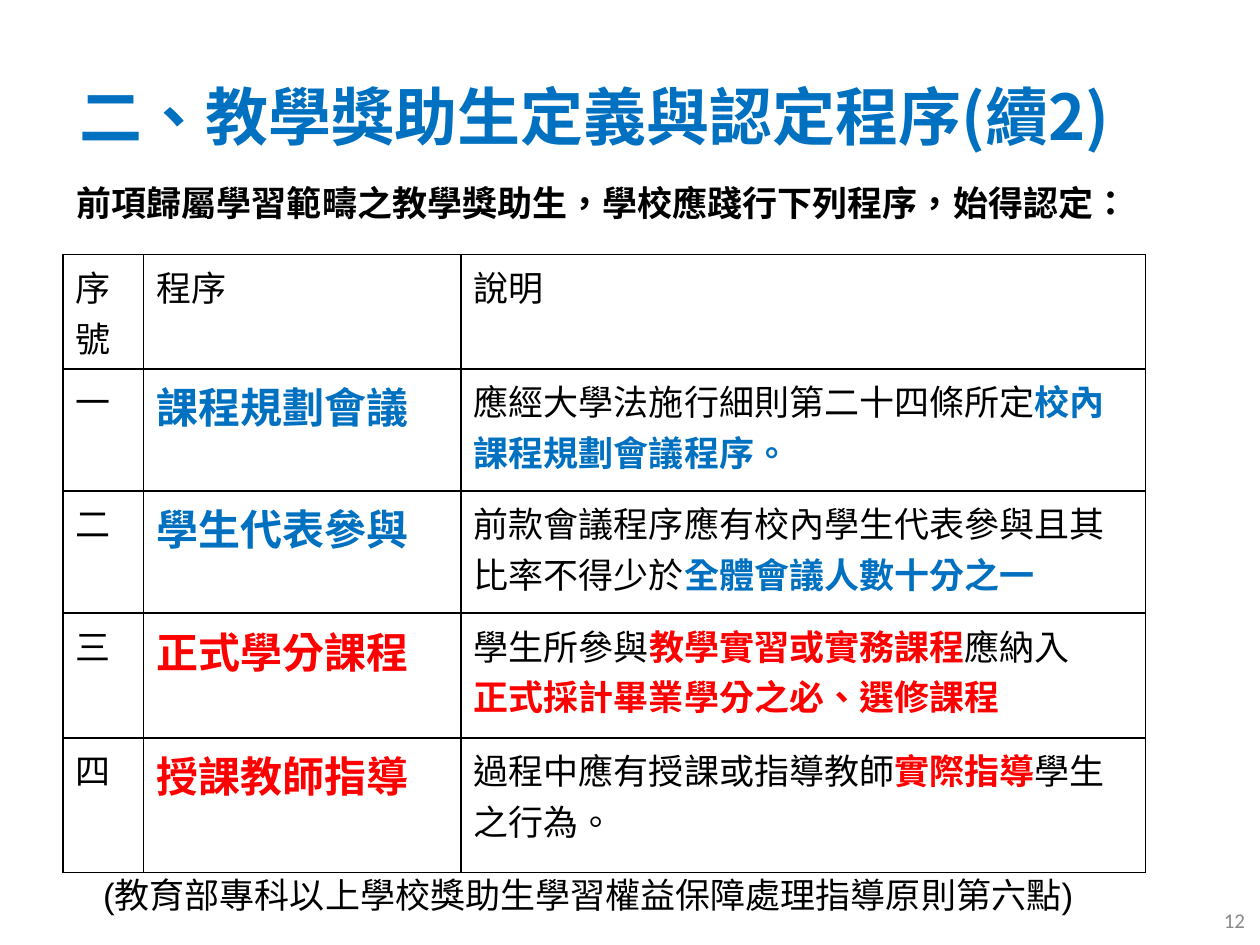
from lxml import etree
from pptx import Presentation
from pptx.dml.color import RGBColor
from pptx.enum import lang, text
from pptx.oxml import ns
from pptx.util import Inches, Pt

INK = {"black": "000000", "white": "FFFFFF", "blue": "0070C0", "red": "FF0000", "gray": "898989"}
HAN = "Noto Sans CJK SC"

TITLE = "二、教學獎助生定義與認定程序(續2)"
LEAD = "前項歸屬學習範疇之教學獎助生，學校應踐行下列程序，始得認定："
SOURCE = "(教育部專科以上學校獎助生學習權益保障處理指導原則第六點)"
PAGE = "12"
HEADS = ["序號", "程序", "說明"]
STEPS = [
    ("一", "課程規劃會議", "blue",
     [["應經大學法施行細則第二十四條所定", "*校內課程規劃會議程序。"]]),
    ("二", "學生代表參與", "blue",
     [["前款會議程序應有校內學生代表參與且其比率不得少於", "*全體會議人數十分之一"]]),
    ("三", "正式學分課程", "red",
     [["學生所參與", "*教學實習或實務課程", "應納入"], ["*正式採計畢業學分之必、選修課程"]]),
    ("四", "授課教師指導", "red",
     [["過程中應有授課或指導教師", "*實際指導", "學生之行為。"]]),
]
COLS = [0.64, 2.52, 5.43]
ROWS = [0.73, 0.97, 0.97, 0.99, 1.07]


def write(frame, paras, size=20, face="Arial", color="black", bold=False, key=None,
          align=text.PP_ALIGN.LEFT):
    if isinstance(paras, str):
        paras = [[paras]]
    for i, parts in enumerate(paras):
        para = frame.add_paragraph() if i else frame.paragraphs[0]
        para.alignment = align
        for part in parts:
            strong = part.startswith("*")
            run = para.add_run()
            run.text = part.lstrip("*")
            font = run.font
            font.size, font.bold, font.name = Pt(size), bold or strong, face
            font.color.rgb = RGBColor.from_string(INK[key if strong else color])
            font.language_id = lang.MSO_LANGUAGE_ID.TRADITIONAL_CHINESE
            etree.SubElement(run._r.get_or_add_rPr(), ns.qn("a:ea"), typeface=HAN)


def label(slide, box, words, anchor=text.MSO_ANCHOR.TOP, **style):
    frame = slide.shapes.add_textbox(*map(Inches, box)).text_frame
    frame.word_wrap = True
    frame.vertical_anchor = anchor
    write(frame, words, **style)


def edge(cell):
    props = cell._tc.get_or_add_tcPr()
    for i, side in enumerate(("lnL", "lnR", "lnT", "lnB")):
        line = etree.Element(ns.qn("a:" + side), w=str(Pt(1)))
        fill = etree.SubElement(line, ns.qn("a:solidFill"))
        etree.SubElement(fill, ns.qn("a:srgbClr"), val=INK["black"])
        props.insert(i, line)


def main():
    deck = Presentation()
    deck.slide_width, deck.slide_height = Inches(10), Inches(7.5)
    slide = deck.slides.add_slide(deck.slide_layouts[5])

    title = slide.shapes.title
    title.left, title.top, title.width, title.height = map(Inches, (0.53, 0.29, 9, 1.25))
    title.text_frame.vertical_anchor = text.MSO_ANCHOR.MIDDLE
    write(title.text_frame, TITLE, size=36, face=HAN, color="blue", bold=True)

    grid = slide.shapes.add_table(len(ROWS), len(COLS), Inches(0.5), Inches(2.02),
                                  Inches(sum(COLS)), Inches(sum(ROWS))).table
    for col, width in zip(grid.columns, COLS):
        col.width = Inches(width)
    for row, height in zip(grid.rows, ROWS):
        row.height = Inches(height)
    for cell in grid.iter_cells():
        cell.fill.solid()
        cell.fill.fore_color.rgb = RGBColor.from_string(INK["white"])
        edge(cell)
    for c, head in enumerate(HEADS):
        write(grid.cell(0, c).text_frame, head)
    for r, (mark, name, color, notes) in enumerate(STEPS, 1):
        write(grid.cell(r, 0).text_frame, mark)
        write(grid.cell(r, 1).text_frame, name, size=24, face="Cambria", color=color, bold=True)
        write(grid.cell(r, 2).text_frame, notes, face="Cambria", key=color)

    label(slide, (0.72, 6.88, 9.13, 0.44), SOURCE)
    label(slide, (0.51, 1.39, 8.82, 0.44), LEAD, bold=True)
    label(slide, (7.65, 7.1, 2.33, 0.4), PAGE, anchor=text.MSO_ANCHOR.MIDDLE, size=12,
          face="Calibri", color="gray", align=text.PP_ALIGN.RIGHT)
    deck.save("out.pptx")


if __name__ == "__main__":
    main()
